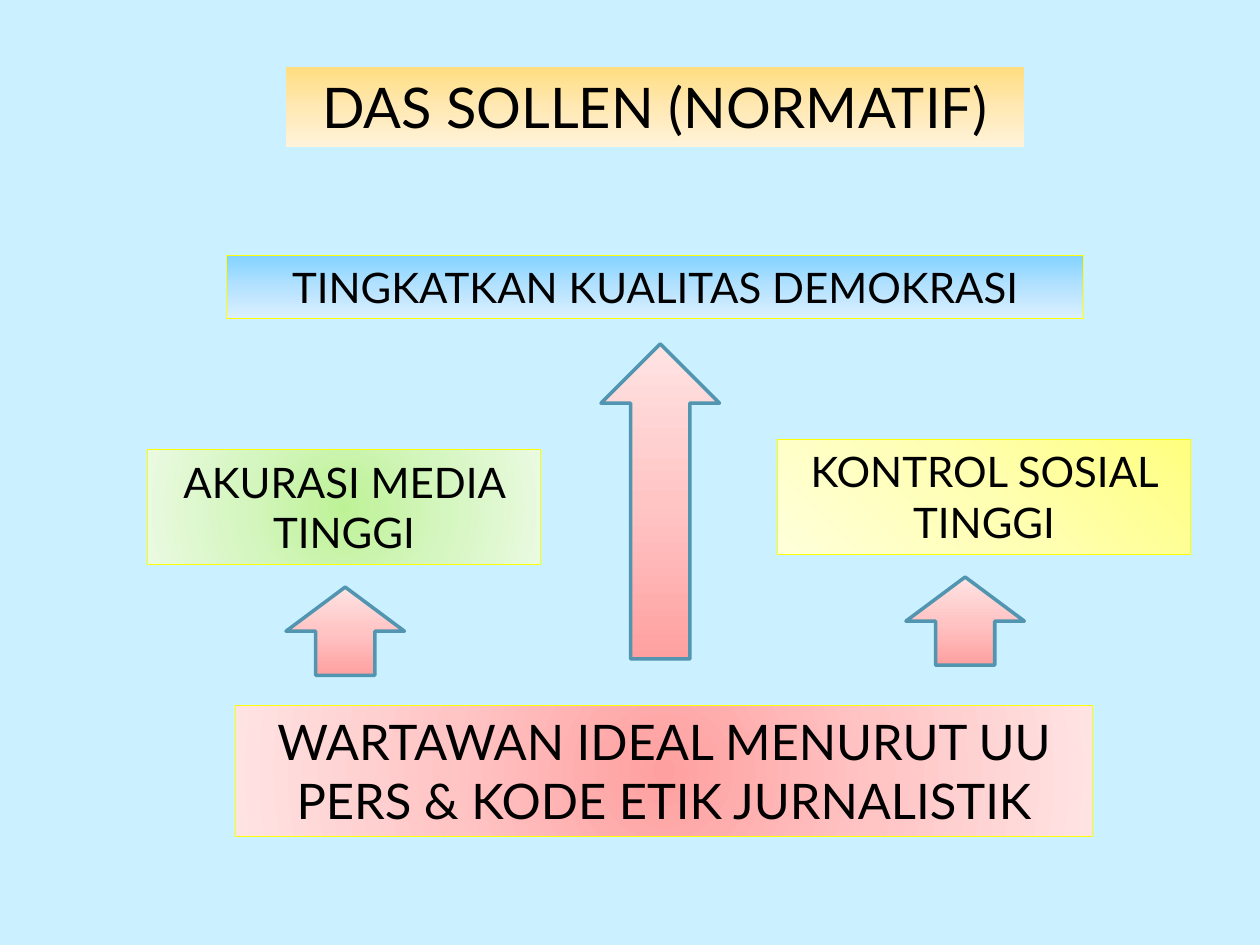
from dataclasses import dataclass
from typing import Optional

from pptx import Presentation
from pptx.dml.color import RGBColor
from pptx.enum import shapes, text
from pptx.oxml import parse_xml
from pptx.oxml.ns import nsdecls, qn
from pptx.util import Inches, Pt

BACKGROUND = RGBColor(0xCB, 0xF0, 0xFF)
BLACK = RGBColor(0, 0, 0)
YELLOW = RGBColor(0xFF, 0xFF, 0)
STEEL = RGBColor(0x51, 0x95, 0xB0)


def shades(*values: str) -> tuple[RGBColor, ...]:
    return tuple(RGBColor.from_string(value) for value in values)


RED_SHADES = shades("FFA0A0", "FFC5C5", "FFE3E3")
BLUE_SHADES = shades("83D3FF", "B5E2FF", "DBF0FF")
GREEN_SHADES = shades("BEF297", "D5F6C0", "EAFAE0")
YELLOW_SHADES = shades("FFFF80", "FFFFB3", "FFFFDA")
ORANGE_SHADES = shades("FFDE80", "FFE8B3", "FFF3DA")

FONT = "Lato"
ARROW_WIDTH = 0.94


@dataclass(frozen=True)
class Box:
    wording: str
    left: float
    top: float
    width: float
    height: float
    colors: tuple[RGBColor, ...]
    angle: Optional[int] = 90  # None means a gradient from the centre
    size: int = 24
    line: Optional[RGBColor] = YELLOW


@dataclass(frozen=True)
class Arrow:
    left: float
    top: float
    height: float


BOXES = (
    Box("WARTAWAN IDEAL MENURUT UU PERS & KODE ETIK JURNALISTIK",
        1.87, 5.6, 6.8, 1.04, RED_SHADES, angle=None, size=28),
    Box("TINGKATKAN KUALITAS DEMOKRASI", 1.8, 2.03, 6.8, 0.5, BLUE_SHADES),
    Box("AKURASI MEDIA TINGGI", 1.17, 3.57, 3.12, 0.91, GREEN_SHADES, angle=None),
    Box("KONTROL SOSIAL TINGGI", 6.17, 3.49, 3.28, 0.91, YELLOW_SHADES, angle=135),
    Box("DAS SOLLEN (NORMATIF)", 2.27, 0.53, 5.86, 0.64, ORANGE_SHADES, size=32, line=None),
)
ARROWS = (Arrow(7.19, 4.58, 0.7), Arrow(2.27, 4.66, 0.7), Arrow(4.77, 2.73, 2.5))


def set_gradient(shape, colors: tuple[RGBColor, ...], angle: Optional[int]) -> None:
    """Fill with evenly spaced stops, clockwise by angle or out from the centre."""
    step = 100000 // (len(colors) - 1)
    stops = "".join(
        f'<a:gs pos="{index * step}"><a:srgbClr val="{color}"/></a:gs>'
        for index, color in enumerate(colors)
    )
    if angle is None:
        direction = ('<a:path path="circle">'
                     '<a:fillToRect l="50000" t="50000" r="50000" b="50000"/></a:path>')
    else:
        direction = f'<a:lin ang="{angle * 60000}" scaled="0"/>'
    gradient = parse_xml(
        f'<a:gradFill {nsdecls("a")} rotWithShape="1">'
        f"<a:gsLst>{stops}</a:gsLst>{direction}</a:gradFill>"
    )
    shape.fill.gradient()
    properties = shape._element.spPr
    properties.replace(properties.find(qn("a:gradFill")), gradient)


def add_gradient_shape(slide, kind, left: float, top: float, width: float, height: float, *,
                       colors: tuple[RGBColor, ...], angle: Optional[int],
                       line: Optional[RGBColor], line_width: float):
    shape = slide.shapes.add_shape(
        kind, Inches(left), Inches(top), Inches(width), Inches(height))
    shape.shadow.inherit = False
    set_gradient(shape, colors, angle)
    if line is None:
        shape.line.fill.background()
    else:
        shape.line.color.rgb = line
        shape.line.width = Pt(line_width)
    return shape


def write_text(shape, wording: str, *, size: int, color: RGBColor = BLACK,
               font: str = FONT, align=text.PP_ALIGN.CENTER) -> None:
    frame = shape.text_frame
    frame.word_wrap = True
    frame.auto_size = text.MSO_AUTO_SIZE.SHAPE_TO_FIT_TEXT
    frame.vertical_anchor = text.MSO_ANCHOR.TOP
    paragraph = frame.paragraphs[0]
    paragraph.alignment = align
    run = paragraph.add_run()
    run.text = wording
    run.font.name = font
    run.font.size = Pt(size)
    run.font.color.rgb = color


def add_box(slide, box: Box) -> None:
    shape = add_gradient_shape(
        slide, shapes.MSO_SHAPE.RECTANGLE, box.left, box.top, box.width, box.height,
        colors=box.colors, angle=box.angle, line=box.line, line_width=0.75)
    write_text(shape, box.wording, size=box.size)


def add_arrow(slide, arrow: Arrow) -> None:
    add_gradient_shape(
        slide, shapes.MSO_SHAPE.UP_ARROW, arrow.left, arrow.top, ARROW_WIDTH, arrow.height,
        colors=RED_SHADES, angle=270, line=STEEL, line_width=2)


def main() -> None:
    presentation = Presentation()
    presentation.slide_width = Inches(10)
    presentation.slide_height = Inches(7.5)
    slide = presentation.slides.add_slide(presentation.slide_layouts[6])
    slide.background.fill.solid()
    slide.background.fill.fore_color.rgb = BACKGROUND
    for box in BOXES:
        add_box(slide, box)
    for arrow in ARROWS:
        add_arrow(slide, arrow)
    presentation.save("out.pptx")


if __name__ == "__main__":
    main()
